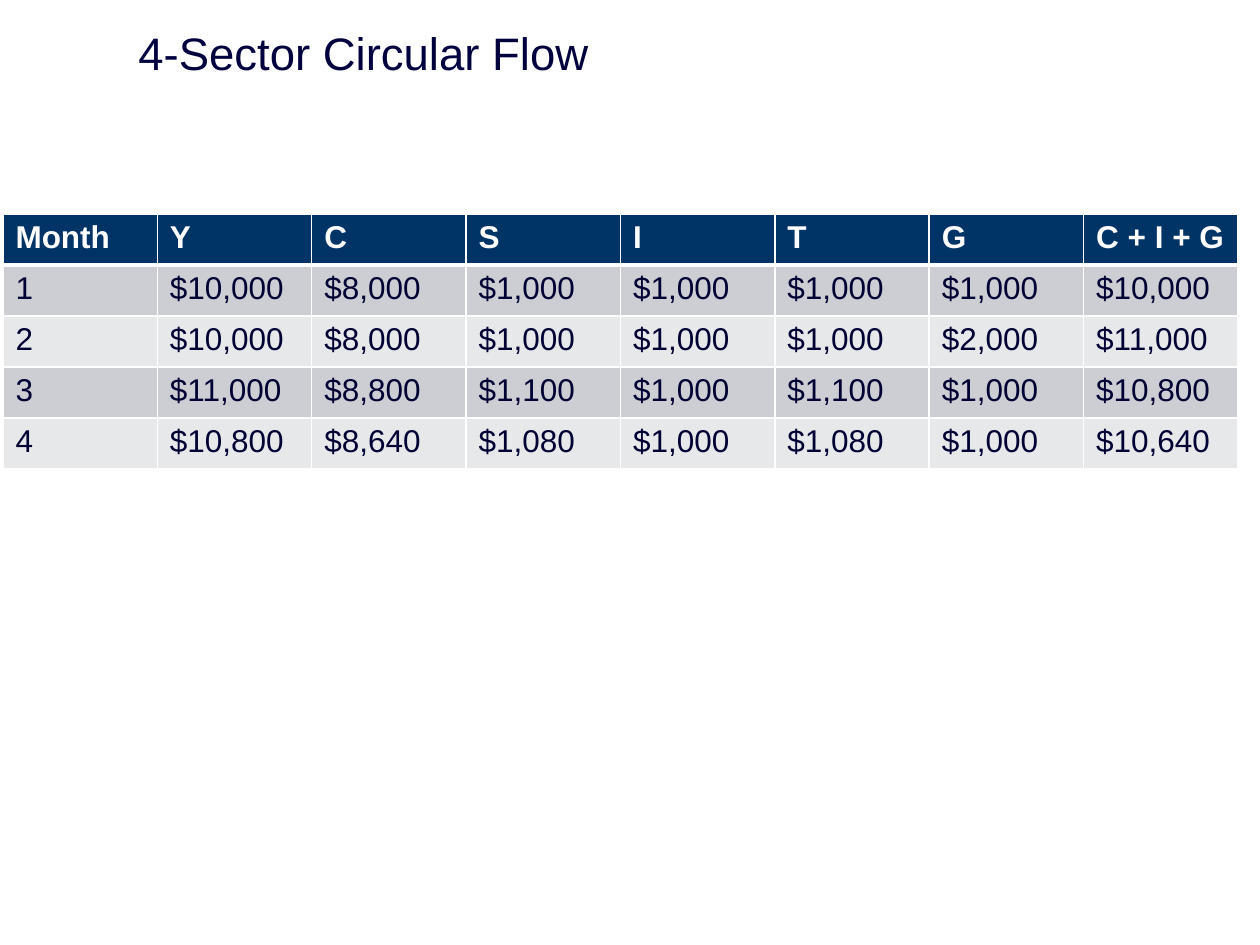
"""Build the slide with the table of the 4-sector circular flow."""
from dataclasses import dataclass

from lxml.etree import SubElement as Sub
from pptx import Presentation as Deck
from pptx.dml.color import RGBColor as Rgb
from pptx.enum.text import MSO_ANCHOR as Anchor
from pptx.oxml.ns import qn
from pptx.util import Emu, Pt

SCALE = 914400 / 126
FONT = "Arial"
WHITE = Rgb(0xFF, 0xFF, 0xFF)
NAVY = Rgb(0x00, 0x33, 0x66)
TITLE = Rgb(0x00, 0x00, 0x3E)
INK = Rgb(0x00, 0x00, 0x32)
DARK = Rgb(0xCC, 0xCE, 0xD3)
LIGHT = Rgb(0xE7, 0xE8, 0xEA)
THIN, THICK = 1, 3


@dataclass(frozen=True)
class Box:
    left: int
    top: int
    width: int
    height: int

    def emu(self) -> list[Emu]:
        return [px(n) for n in (self.left, self.top, self.width, self.height)]


@dataclass(frozen=True)
class Look:
    size: int
    color: Rgb
    bold: bool = False


@dataclass(frozen=True)
class Row:
    texts: tuple[str, ...]
    look: Look
    fill: Rgb
    above: int = THIN
    below: int = THIN


HEAD = Look(18, WHITE, True)
BODY = Look(18, INK)
ROWS = (
    Row(("Month", "Y", "C", "S", "I", "T", "G", "C + I + G"), HEAD, NAVY, below=THICK),
    Row(("1", "$10,000", "$8,000", "$1,000", "$1,000", "$1,000", "$1,000", "$10,000"),
        BODY, DARK, above=THICK),
    Row(("2", "$10,000", "$8,000", "$1,000", "$1,000", "$1,000", "$2,000", "$11,000"),
        BODY, LIGHT),
    Row(("3", "$11,000", "$8,800", "$1,100", "$1,000", "$1,100", "$1,000", "$10,800"),
        BODY, DARK),
    Row(("4", "$10,800", "$8,640", "$1,080", "$1,000", "$1,080", "$1,000", "$10,640"),
        BODY, LIGHT),
)


def px(n: int) -> Emu:
    return Emu(round(n * SCALE))


def write(frame, text: str, look: Look) -> None:
    frame.text = text
    font = frame.paragraphs[0].runs[0].font
    font.name, font.size, font.bold = FONT, Pt(look.size), look.bold
    font.color.rgb = look.color


def edge(cell, side: str, width: int) -> None:
    line = Sub(cell._tc.get_or_add_tcPr(), qn(f"a:{side}"), w=str(Pt(width)))
    Sub(Sub(line, qn("a:solidFill")), qn("a:srgbClr"), val=str(WHITE))


def draw_title(slide, box: Box, text: str) -> None:
    frame = slide.shapes.add_textbox(*box.emu()).text_frame
    frame.word_wrap = True
    frame.vertical_anchor = Anchor.MIDDLE
    write(frame, text, Look(26, TITLE))


def draw_table(slide, box: Box, rows: tuple[Row, ...]) -> None:
    table = slide.shapes.add_table(len(rows), len(rows[0].texts), *box.emu()).table
    for r, row in enumerate(rows):
        for c, text in enumerate(row.texts):
            cell = table.cell(r, c)
            write(cell.text_frame, text, row.look)
            for side, width in (("lnL", THIN), ("lnR", THIN),
                                ("lnT", row.above), ("lnB", row.below)):
                edge(cell, side, width)
            cell.fill.solid()
            cell.fill.fore_color.rgb = row.fill


def main() -> None:
    deck = Deck()
    deck.slide_width, deck.slide_height = px(1260), px(945)
    slide = deck.slides.add_slide(deck.slide_layouts[6])
    draw_title(slide, Box(126, 20, 1134, 64), "4-Sector Circular Flow")
    draw_table(slide, Box(3, 214, 1235, 255), ROWS)
    deck.save("out.pptx")


if __name__ == "__main__":
    main()
